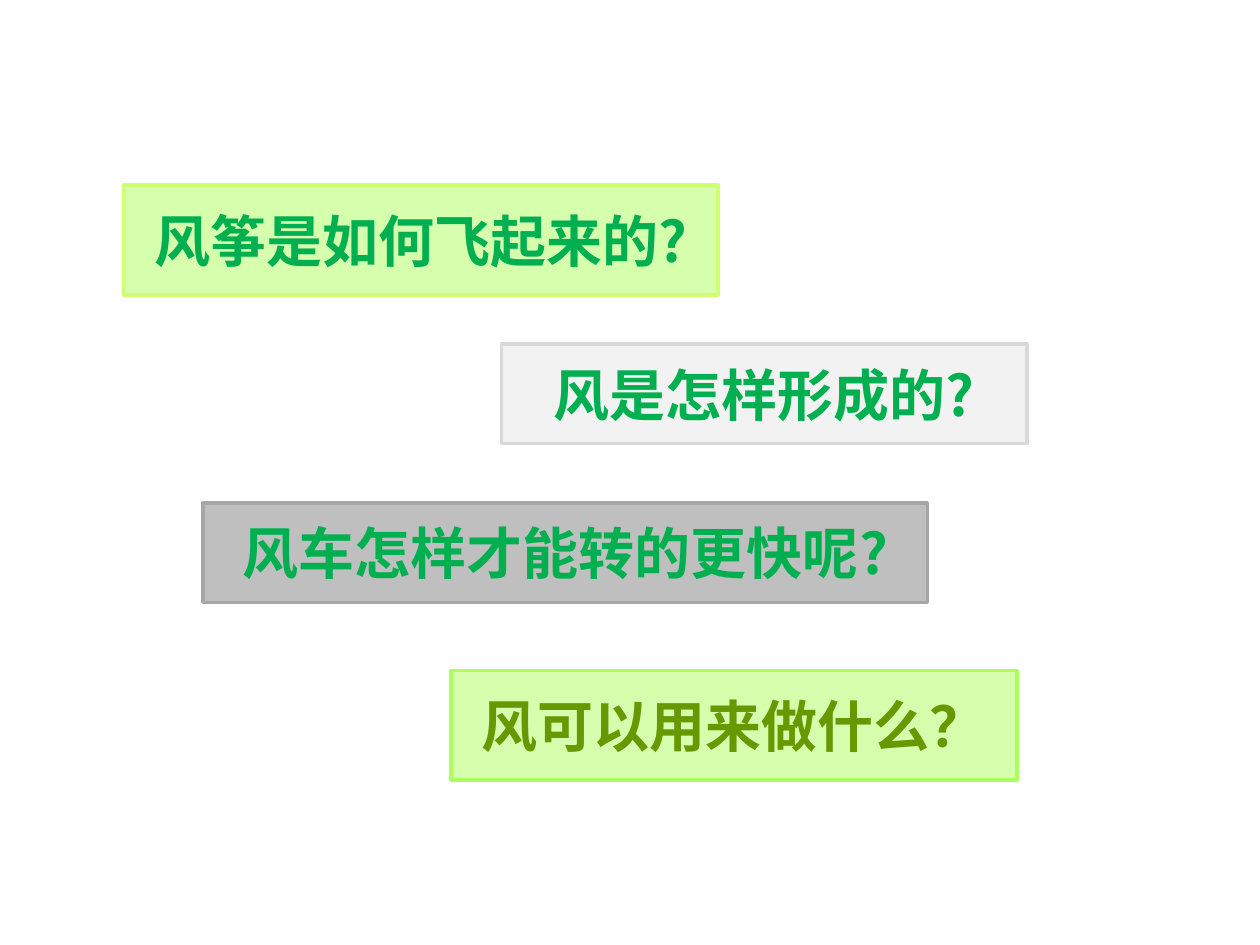
"""Build a slide of four questions about wind in staggered boxes."""
from dataclasses import dataclass

from lxml.etree import SubElement
from pptx import Presentation
from pptx.dml.color import RGBColor
from pptx.enum.lang import MSO_LANGUAGE_ID as Language
from pptx.enum.shapes import MSO_SHAPE as Shape
from pptx.enum.text import MSO_ANCHOR as Anchor, PP_ALIGN as Align
from pptx.oxml.ns import qn
from pptx.util import Inches, Pt


@dataclass(frozen=True)
class Theme:
    font: str = "Noto Sans CJK SC"
    text_size: int = 32
    line_width: int = 2
    green: str = "00B050"
    olive: str = "669900"
    lime: str = "D6FFAD"
    lime_edge: str = "CFFF70"
    bright_edge: str = "ADFF5C"
    pale: str = "F2F2F2"
    pale_edge: str = "D9D9D9"
    gray: str = "BFBFBF"
    gray_edge: str = "A6A6A6"


THEME = Theme()
SLIDE_SIZE = (10, 7.5)
TALL, SHORT = 0.87, 0.79
QUESTIONS = [
    ("风筝是如何飞起来的?", (0.98, 1.47, 4.72, TALL), THEME.lime, THEME.lime_edge, THEME.green),
    ("风是怎样形成的?", (3.98, 2.73, 4.17, SHORT), THEME.pale, THEME.pale_edge, THEME.green),
    ("风车怎样才能转的更快呢?", (1.61, 3.99, 5.75, SHORT), THEME.gray, THEME.gray_edge, THEME.green),
    ("风可以用来做什么？", (3.58, 5.32, 4.49, TALL), THEME.lime, THEME.bright_edge, THEME.olive),
]


def add_question(slide, text, box, fill, edge, color):
    shape = slide.shapes.add_shape(Shape.RECTANGLE, *map(Inches, box))
    shape.shadow.inherit = False
    shape.fill.solid()
    shape.fill.fore_color.rgb = RGBColor.from_string(fill)
    shape.line.color.rgb = RGBColor.from_string(edge)
    shape.line.width = Pt(THEME.line_width)

    text_frame = shape.text_frame
    text_frame.text = text
    text_frame.word_wrap = True
    text_frame.vertical_anchor = Anchor.MIDDLE
    paragraph = text_frame.paragraphs[0]
    paragraph.alignment = Align.CENTER
    run = paragraph.runs[0]
    run.font.size = Pt(THEME.text_size)
    run.font.bold = True
    run.font.color.rgb = RGBColor.from_string(color)
    run.font.language_id = Language.SIMPLIFIED_CHINESE
    run.font.name = THEME.font
    SubElement(run.font._element, qn("a:ea"), typeface=THEME.font)


def main():
    presentation = Presentation()
    presentation.slide_width, presentation.slide_height = map(Inches, SLIDE_SIZE)
    blank_layout = presentation.slide_layouts.get_by_name("Blank")
    slide = presentation.slides.add_slide(blank_layout)
    for question in QUESTIONS:
        add_question(slide, *question)
    presentation.save("out.pptx")


if __name__ == "__main__":
    main()
